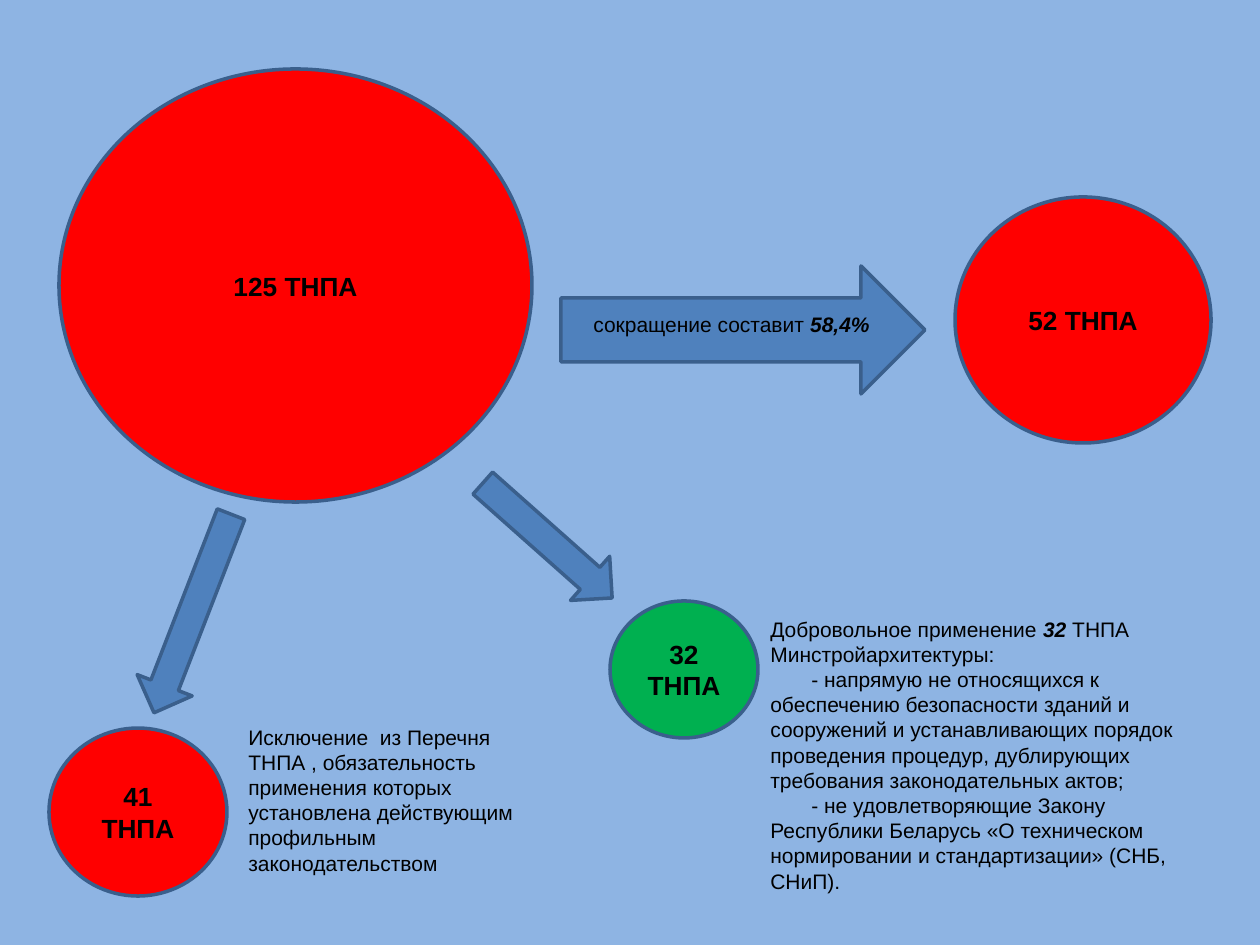
from dataclasses import dataclass

import pptx
import pptx.dml.color
import pptx.enum.shapes
import pptx.enum.text
import pptx.util

SHAPES = pptx.enum.shapes.MSO_SHAPE
ALIGN = pptx.enum.text.PP_ALIGN
ANCHOR = pptx.enum.text.MSO_ANCHOR


@dataclass(frozen=True)
class Theme:
    """Colours, type sizes and line width of the slide."""
    background: str = "8EB4E3"
    red: str = "FF0000"
    green: str = "00B050"
    arrow: str = "4F81BD"
    outline: str = "3A5F8C"
    ink: str = "000000"
    font: str = "Arial"
    count_size: int = 15
    body_size: int = 12
    line_width: int = 2


def px(length):
    """Turn pixels into EMU at 126 pixels to the inch."""
    return pptx.util.Emu(round(length * 914400 / 126))


def rgb(value):
    """Return the colour for a hexadecimal value."""
    return pptx.dml.color.RGBColor.from_string(value)


def add_text(paragraph, text, *, font, size, color, bold=False, italic=False):
    """Append one formatted run to a paragraph."""
    run = paragraph.add_run()
    run.text = text
    run.font.name = font
    run.font.size = pptx.util.Pt(size)
    run.font.color.rgb = rgb(color)
    run.font.bold = bold
    run.font.italic = italic


class SlideBuilder:
    """Draws styled elements on the current slide."""

    def __init__(self, slide, theme):
        """Keep the slide and theme, and paint the background."""
        self.slide = slide
        self.theme = theme
        fill = slide.background.fill
        fill.solid()
        fill.fore_color.rgb = rgb(theme.background)

    def preset(self, kind, box, color):
        """Add an outlined preset shape."""
        shape = self.slide.shapes.add_shape(kind, *map(px, box))
        shape.shadow.inherit = False
        shape.fill.solid()
        shape.fill.fore_color.rgb = rgb(color)
        shape.line.color.rgb = rgb(self.theme.outline)
        shape.line.width = pptx.util.Pt(self.theme.line_width)
        return shape

    def circle(self, box, color, label):
        """Add an ellipse with a bold centred label."""
        frame = self.preset(SHAPES.OVAL, box, color).text_frame
        frame.word_wrap = True
        frame.vertical_anchor = ANCHOR.MIDDLE
        paragraph = frame.paragraphs[0]
        paragraph.alignment = ALIGN.CENTER
        add_text(paragraph, label, font=self.theme.font, size=self.theme.count_size,
                 color=self.theme.ink, bold=True)

    def arrow(self, kind, box, rotation=0):
        """Add a block arrow turned by the given degrees."""
        self.preset(kind, box, self.theme.arrow).rotation = rotation

    def text(self, box, paragraphs, wrap=True, indent=0):
        """Add paragraphs of (text, emphasis) runs, indenting all but the first."""
        frame = self.slide.shapes.add_textbox(*map(px, box)).text_frame
        frame.word_wrap = wrap
        for index, runs in enumerate(paragraphs):
            paragraph = frame.add_paragraph() if index else frame.paragraphs[0]
            if index and indent:
                paragraph._p.get_or_add_pPr().set("indent", str(px(indent)))
            for text, emphasis in runs:
                add_text(paragraph, text, font=self.theme.font, size=self.theme.body_size,
                         color=self.theme.ink, bold=emphasis, italic=emphasis)


def main():
    """Build and save the slide."""
    presentation = pptx.Presentation()
    presentation.slide_width = px(1260)
    presentation.slide_height = px(945)
    theme = Theme()
    builder = SlideBuilder(
        presentation.slides.add_slide(presentation.slide_layouts[6]), theme)

    for box, color, label in (
        ((59, 69, 473, 433), theme.red, "125 ТНПА"),
        ((49, 728, 178, 168), theme.red, "41 ТНПА"),
        ((610, 601, 148, 137), theme.green, "32 ТНПА"),
        ((955, 197, 256, 246), theme.red, "52 ТНПА"),
    ):
        builder.circle(box, color, label)

    builder.arrow(SHAPES.DOWN_ARROW, (163, 507, 59, 213), 21.2)
    builder.arrow(SHAPES.DOWN_ARROW, (518, 454, 59, 173), 311.6)
    builder.arrow(SHAPES.RIGHT_ARROW, (561, 266, 364, 128))

    builder.text((236, 718, 305, 165), [[
        ("Исключение  из Перечня ТНПА , обязательность применения которых "
         "установлена действующим профильным законодательством", False)]])
    builder.text((758, 610, 444, 292), [
        [("Добровольное применение ", False), ("32", True),
         (" ТНПА Минстройархитектуры:", False)],
        [("- напрямую не относящихся к обеспечению безопасности зданий и "
          "сооружений и устанавливающих порядок проведения процедур, "
          "дублирующих требования законодательных актов;", False)],
        [("- не удовлетворяющие Закону Республики Беларусь «О техническом "
          "нормировании и стандартизации» (СНБ, СНиП).", False)],
    ], indent=41)
    builder.text((581, 305, 304, 38), [
        [("сокращение составит ", False), ("58,4%", True)]], wrap=False)

    presentation.save("out.pptx")


if __name__ == "__main__":
    main()
